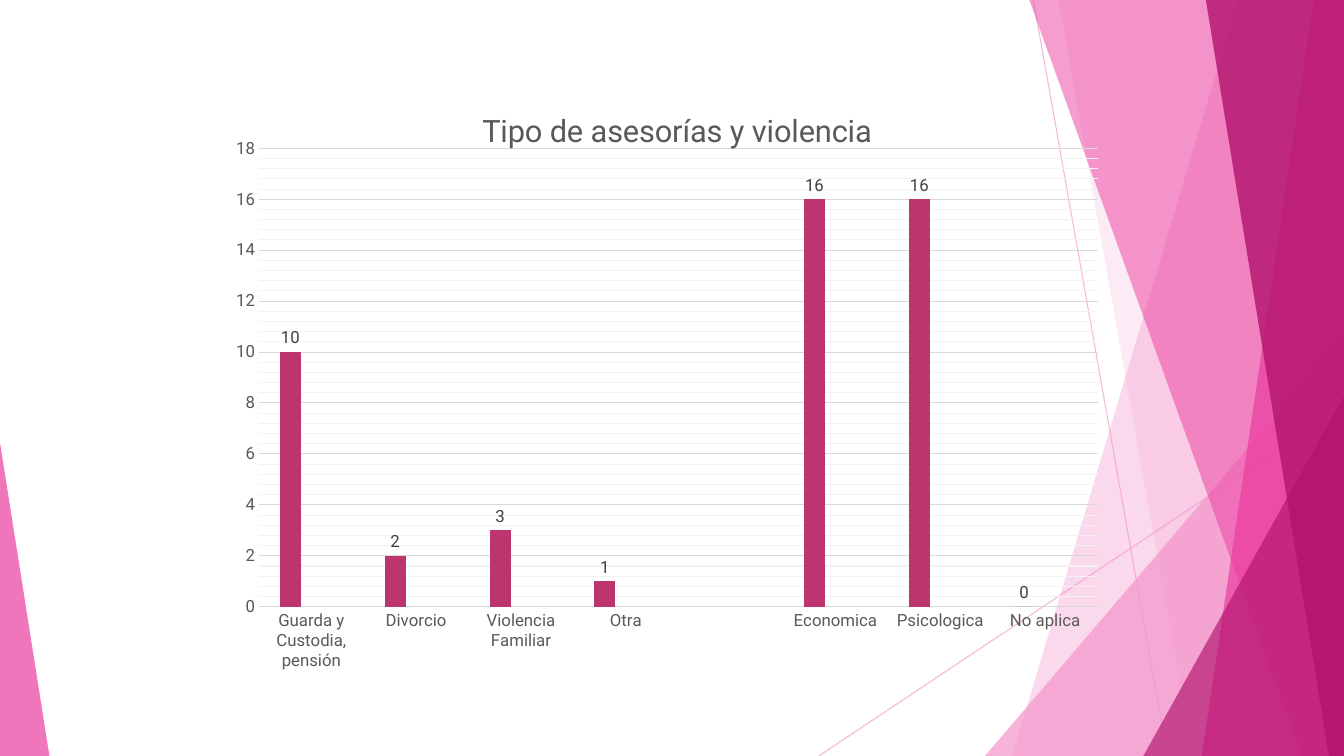
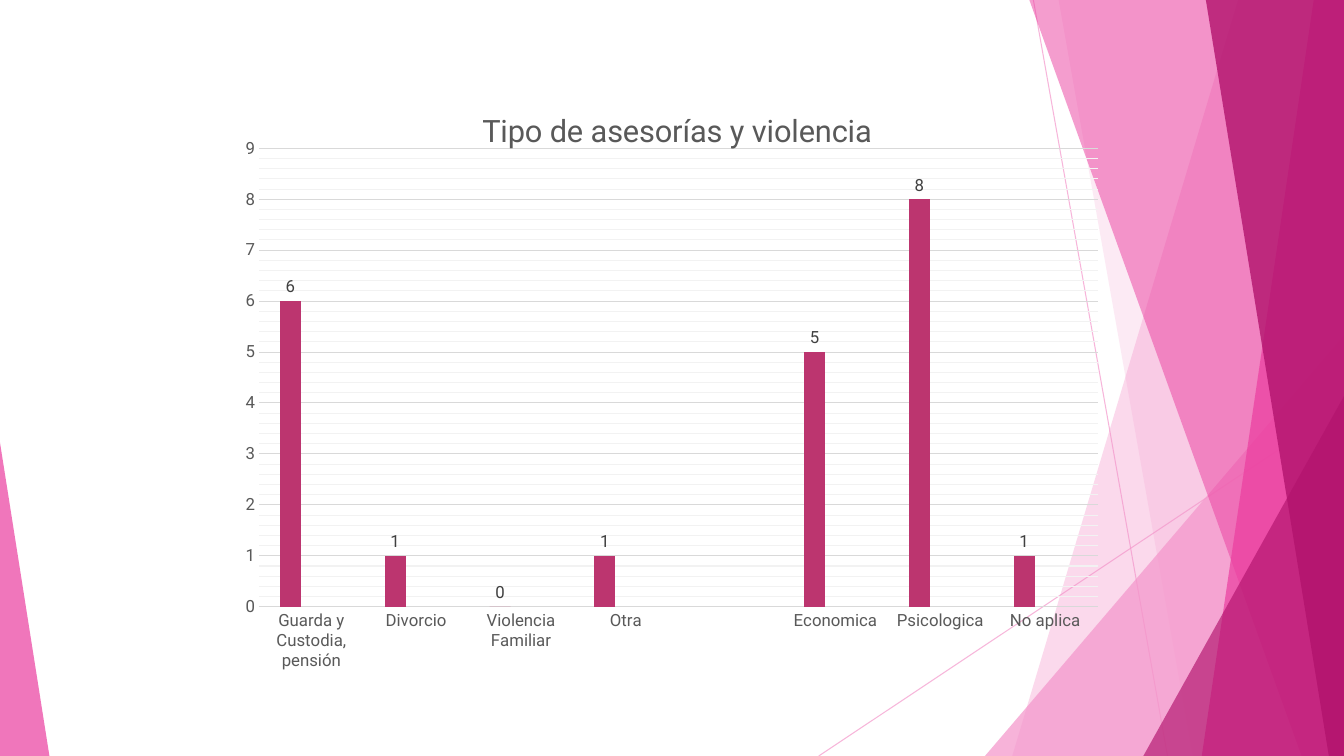
from pptx import Presentation
from pptx.chart.data import CategoryChartData
from pptx.dml.color import RGBColor
from pptx.enum.chart import XL_CHART_TYPE as ChartType, XL_LABEL_POSITION as LabelPosition, XL_TICK_MARK as TickMark
from pptx.enum.shapes import MSO_CONNECTOR as Connector, MSO_SHAPE as Preset
from pptx.oxml.ns import qn
from pptx.util import Inches, Pt
from lxml.etree import SubElement, Element

SLIDE_WIDTH = Inches(13.33)
SLIDE_HEIGHT = Inches(7.5)

PALE_PINK = RGBColor(0xF4, 0x96, 0xCB)
PINK = RGBColor(0xEB, 0x3D, 0x9F)
MAGENTA = RGBColor(0xB2, 0x13, 0x6D)
SERIES_COLORS = [RGBColor(0xBC, 0x35, 0x6F), RGBColor(0xF2, 0x7E, 0x19), RGBColor(0xBC, 0x80, 0xE0)]
AXIS_TEXT = RGBColor(0x59, 0x59, 0x59)
LABEL_TEXT = RGBColor(0x40, 0x40, 0x40)
GRID = RGBColor(0xD9, 0xD9, 0xD9)
MINOR_GRID = RGBColor(0xF2, 0xF2, 0xF2)

FONT = "Roboto"
TITLE = "Tipo de asesorías y violencia"
CATEGORIES = ["Guarda y Custodia, pensión", "Divorcio", "Violencia Familiar", "Otra", "",
              "Economica", "Psicologica", "No aplica"]
SLIDES = [
    ([10, 2, 3, 1, None, 16, 16, 0], 2),
    ([6, 1, 0, 1, None, 5, 8, 1], 1),
]
MAJOR_STEPS = 9
MINOR_STEPS = 5


def across(percent):
    return round(SLIDE_WIDTH * percent / 100)


def down(percent):
    return round(SLIDE_HEIGHT * percent / 100)


def set_opacity(shape, percent):
    for color in shape.element.spPr.iter(qn("a:srgbClr")):
        SubElement(color, qn("a:alpha")).set("val", str(percent * 1000))


def paint(shape, color, opacity):
    shape.shadow.inherit = False
    shape.fill.solid()
    shape.fill.fore_color.rgb = color
    shape.line.fill.background()
    set_opacity(shape, opacity)


def add_ray(slide, start, end):
    ray = slide.shapes.add_connector(Connector.STRAIGHT, across(start[0]), down(start[1]),
                                     across(end[0]), down(end[1]))
    ray.line.color.rgb = PALE_PINK
    ray.line.width = Pt(0.75)
    set_opacity(ray, 70)
    SubElement(ray.element.spPr, qn("a:effectLst"))


def add_blade(slide, top_left, bottom_left, color, opacity):
    builder = slide.shapes.build_freeform(across(top_left), 0)
    builder.add_line_segments([(across(100), 0), (across(100), down(100)), (across(bottom_left), down(100))])
    paint(builder.convert_to_shape(), color, opacity)


def add_corner(slide, left, top, width, apex, color, opacity):
    corner = slide.shapes.add_shape(Preset.ISOSCELES_TRIANGLE, across(left), down(top),
                                    across(width), down(100 - top))
    corner.adjustments[0] = apex
    paint(corner, color, opacity)


def add_backdrop(slide):
    add_ray(slide, (76.89, 0), (86.87, 100))
    add_ray(slide, (100, 53.73), (60.92, 100))
    add_blade(slide, 92.12, 75.32, PALE_PINK, 36)
    add_blade(slide, 78.77, 88.75, PALE_PINK, 20)
    add_corner(slide, 73.29, 44.4, 26.71, 1, PALE_PINK, 72)
    add_blade(slide, 76.59, 96.85, PINK, 50)
    add_blade(slide, 97.75, 89.42, PINK, 70)
    add_blade(slide, 89.72, 98.87, MAGENTA, 80)
    add_corner(slide, 85.07, 52.4, 14.93, 1, MAGENTA, 66)
    add_corner(slide, 0, 58.53, 3.68, 0, PINK, 70)


def style_font(font, size, color):
    font.name = FONT
    font.size = Pt(size)
    font.bold = False
    font.color.rgb = color


def style_line(line, color):
    line.color.rgb = color
    line.width = Pt(0.75)


def find_part(chart, name):
    return chart._chartSpace.find(".//" + qn(name))


def set_layout(parent, index, target=None, **percents):
    for old_layout in parent.findall(qn("c:layout")):
        parent.remove(old_layout)
    layout = Element(qn("c:layout"))
    manual = SubElement(layout, qn("c:manualLayout"))
    if target:
        SubElement(manual, qn("c:layoutTarget")).set("val", target)
    for mode in ("xMode", "yMode"):
        SubElement(manual, qn(f"c:{mode}")).set("val", "edge")
    for name, percent in percents.items():
        SubElement(manual, qn(f"c:{name}")).set("val", str(percent / 100))
    parent.insert(index, layout)


def add_title(chart):
    paragraph = chart.chart_title.text_frame.paragraphs[0]
    run = paragraph.add_run()
    run.text = TITLE
    style_font(run.font, 22, AXIS_TEXT)
    set_layout(find_part(chart, "c:title"), 1, x=28.2, y=4.3)


def style_minor_gridlines(chart):
    properties = SubElement(find_part(chart, "c:minorGridlines"), qn("c:spPr"))
    line = SubElement(properties, qn("a:ln"), w=str(Pt(0.75)))
    fill = SubElement(line, qn("a:solidFill"))
    SubElement(fill, qn("a:srgbClr"), val=str(MINOR_GRID))


def style_axes(chart, step):
    for axis in (chart.category_axis, chart.value_axis):
        axis.major_tick_mark = axis.minor_tick_mark = TickMark.NONE
        style_font(axis.tick_labels.font, 12, AXIS_TEXT)
    style_line(chart.category_axis.format.line, GRID)
    values = chart.value_axis
    values.format.line.fill.background()
    values.minimum_scale = 0
    values.maximum_scale = step * MAJOR_STEPS
    values.major_unit = step
    values.minor_unit = step / MINOR_STEPS
    values.has_minor_gridlines = True
    style_line(values.major_gridlines.format.line, GRID)
    style_minor_gridlines(chart)


def style_columns(plot):
    plot.gap_width = 199
    plot.overlap = 0
    plot.vary_by_categories = False
    plot.has_data_labels = True
    labels = plot.data_labels
    labels.show_value = True
    labels.position = LabelPosition.OUTSIDE_END
    style_font(labels.font, 12, LABEL_TEXT)
    for series, color in zip(plot.series, SERIES_COLORS):
        series.format.fill.solid()
        series.format.fill.fore_color.rgb = color


def add_column_chart(slide, counts, step):
    data = CategoryChartData()
    data.categories = CATEGORIES
    empty = [None] * len(CATEGORIES)
    for number, values in enumerate((counts, empty, empty), start=1):
        data.add_series(f"Series {number}", values)
    chart = slide.shapes.add_chart(ChartType.COLUMN_CLUSTERED, across(16.67), down(10.53),
                                   across(66.67), down(79.07), data).chart
    chart.has_legend = False
    chart.font.name = FONT
    chart.font.size = Pt(10)
    add_title(chart)
    style_axes(chart, step)
    style_columns(chart.plots[0])
    set_layout(find_part(chart, "c:plotArea"), 0, "inner", x=3.9, y=11.5, w=93.6, h=76.7)


def main():
    presentation = Presentation()
    presentation.slide_width = SLIDE_WIDTH
    presentation.slide_height = SLIDE_HEIGHT
    for counts, step in SLIDES:
        slide = presentation.slides.add_slide(presentation.slide_layouts[6])
        add_backdrop(slide)
        add_column_chart(slide, counts, step)
    presentation.save("out.pptx")


if __name__ == "__main__":
    main()
